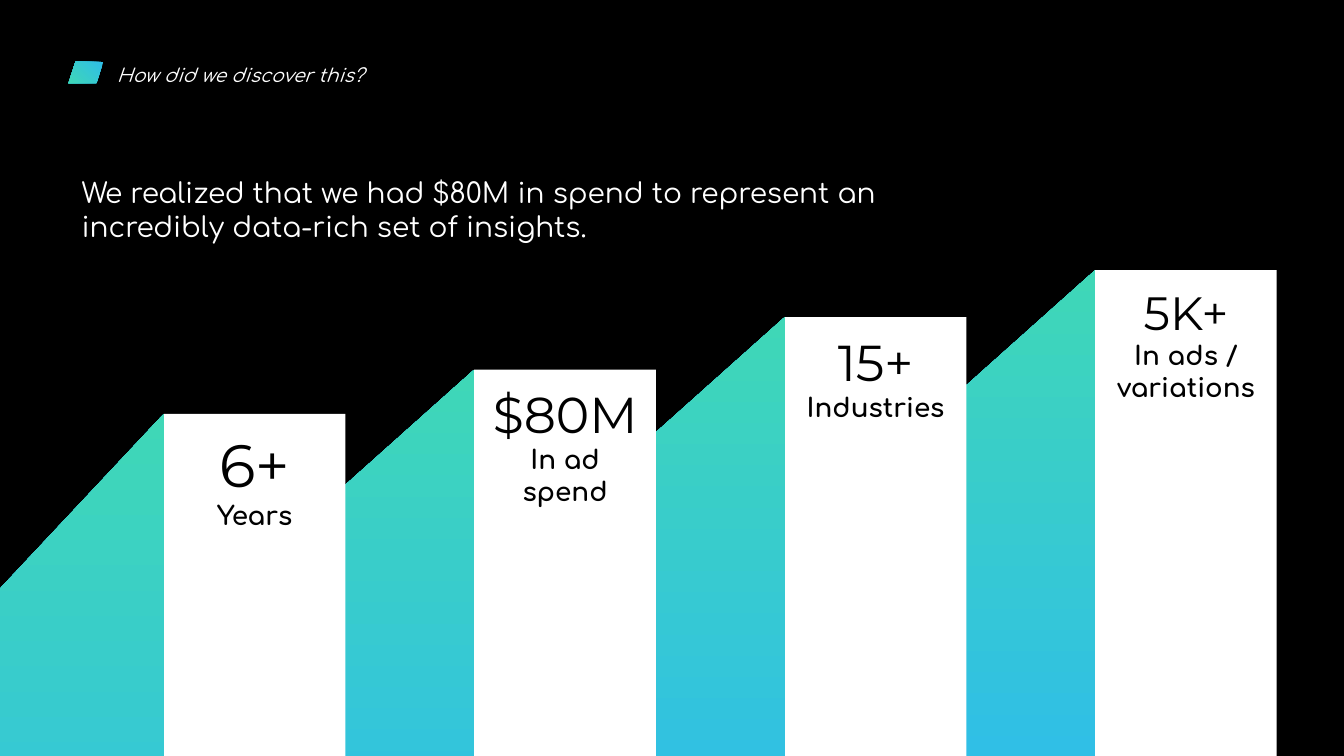
from dataclasses import dataclass

import pptx
import pptx.dml.color
import pptx.enum.shapes
import pptx.enum.text
import pptx.oxml.ns
import pptx.util

Inches = pptx.util.Inches
Color = pptx.dml.color.RGBColor
Shapes = pptx.enum.shapes.MSO_SHAPE
Align = pptx.enum.text.PP_ALIGN
Anchor = pptx.enum.text.MSO_ANCHOR


@dataclass(frozen=True)
class Theme:
    black: Color = Color.from_string("000000")
    white: Color = Color.from_string("FFFFFF")
    blue: Color = Color.from_string("2FBEE8")
    green: Color = Color.from_string("3FD7B7")
    text_font: str = "Comfortaa"
    number_font: str = "Montserrat"
    title_size: int = 10
    statement_size: int = 15
    label_size: int = 14


@dataclass(frozen=True)
class Box:
    left: float
    top: float
    width: float
    height: float

    def lengths(self) -> tuple:
        return tuple(Inches(n) for n in (self.left, self.top, self.width, self.height))


@dataclass(frozen=True)
class Column:
    number: str
    label: str
    top: float
    number_size: int
    height: float = 3.78
    snipped: bool = True


THEME = Theme()
SLIDE_WIDTH = 10
SLIDE_HEIGHT = SLIDE_WIDTH * 9 / 16
MARGIN = 0.51

# Column grid: equal steps from left to right
FIRST_LEFT, COLUMN_STEP = 1.22, 2.31
COLUMN_WIDTH, RAMP_WIDTH = 1.35, 4.23
COLUMNS = [
    Column("6+", "Years", 3.08, 32, height=4.51, snipped=False),
    Column("$80M", "In ad spend", 2.75, 27),
    Column("15+", "Industries", 2.36, 27),
    Column("5K+", "In ads / variations", 2.01, 25),
]


def add_plain_shape(slide, kind, box: Box, flipped: bool = False):
    """Add a shape with neither outline nor shadow."""
    shape = slide.shapes.add_shape(kind, *box.lengths())
    shape.shadow.inherit = False
    shape.line.fill.background()
    if flipped:
        shape.element.spPr.find(pptx.oxml.ns.qn("a:xfrm")).set("flipH", "1")
    return shape


def fill_gradient(shape, angle: float) -> None:
    shape.fill.gradient()
    shape.fill.gradient_angle = angle
    for stop, color in zip(shape.fill.gradient_stops, (THEME.blue, THEME.green)):
        stop.color.rgb = color


def prepare_frame(shape, anchor):
    frame = shape.text_frame
    frame.word_wrap = True
    frame.auto_size = pptx.enum.text.MSO_AUTO_SIZE.NONE
    frame.vertical_anchor = anchor
    frame.margin_left = frame.margin_right = Inches(0.1)
    frame.margin_top = frame.margin_bottom = Inches(0.1)
    return frame


def write(paragraph, text: str, font: str, size: int, color: Color,
          align=Align.LEFT, bold: bool = False, italic: bool = False) -> None:
    paragraph.text = text
    paragraph.alignment = align
    for run in paragraph.runs:
        run.font.name = font
        run.font.size = pptx.util.Pt(size)
        run.font.color.rgb = color
        run.font.bold = bold
        run.font.italic = italic


def add_column(slide, column: Column, left: float) -> None:
    # White front; the ramp hides the left half of a snipped one
    front = Box(left, column.top, COLUMN_WIDTH, column.height)
    if column.snipped:
        wide = Box(left - COLUMN_WIDTH, column.top, 2 * COLUMN_WIDTH, column.height)
        face = add_plain_shape(slide, Shapes.SNIP_1_RECTANGLE, wide, flipped=True)
        face.adjustments[0] = 0.5
    else:
        face = add_plain_shape(slide, Shapes.RECTANGLE, front)
    face.fill.solid()
    face.fill.fore_color.rgb = THEME.white

    # Gradient ramp rising to the front's top left corner
    ramp_box = Box(left - RAMP_WIDTH, column.top, RAMP_WIDTH, column.height)
    ramp = add_plain_shape(slide, Shapes.RIGHT_TRIANGLE, ramp_box, flipped=True)
    fill_gradient(ramp, 90)

    # Number and label
    frame = prepare_frame(slide.shapes.add_textbox(*front.lengths()), Anchor.TOP)
    write(frame.paragraphs[0], column.number, THEME.number_font,
          column.number_size, THEME.black, Align.CENTER)
    write(frame.add_paragraph(), column.label, THEME.text_font,
          THEME.label_size, THEME.black, Align.CENTER, bold=True)


def main() -> None:
    presentation = pptx.Presentation()
    presentation.slide_width = Inches(SLIDE_WIDTH)
    presentation.slide_height = Inches(SLIDE_HEIGHT)
    slide = presentation.slides.add_slide(presentation.slide_layouts[5])
    slide.background.fill.solid()
    slide.background.fill.fore_color.rgb = THEME.black

    # Title and its marker
    marker = add_plain_shape(slide, Shapes.FLOWCHART_DATA, Box(MARGIN, 0.46, 0.26, 0.16))
    fill_gradient(marker, 225)
    title = slide.shapes.title
    title.left, title.top, title.width, title.height = Box(0.77, 0.41, 4.23, 0.33).lengths()
    write(prepare_frame(title, Anchor.BOTTOM).paragraphs[0], "How did we discover this?",
          THEME.text_font, THEME.title_size, THEME.white, italic=True)

    # Statement
    statement = slide.shapes.add_textbox(*Box(MARGIN, 1.08, 6.36, 0.96).lengths())
    write(prepare_frame(statement, Anchor.MIDDLE).paragraphs[0],
          "We realized that we had $80M in spend to represent an "
          "incredibly data-rich set of insights.",
          THEME.text_font, THEME.statement_size, THEME.white)

    # Columns, drawn from the right so each front covers the next ramp
    for index, column in reversed(list(enumerate(COLUMNS))):
        add_column(slide, column, FIRST_LEFT + index * COLUMN_STEP)

    presentation.save("out.pptx")


if __name__ == "__main__":
    main()
